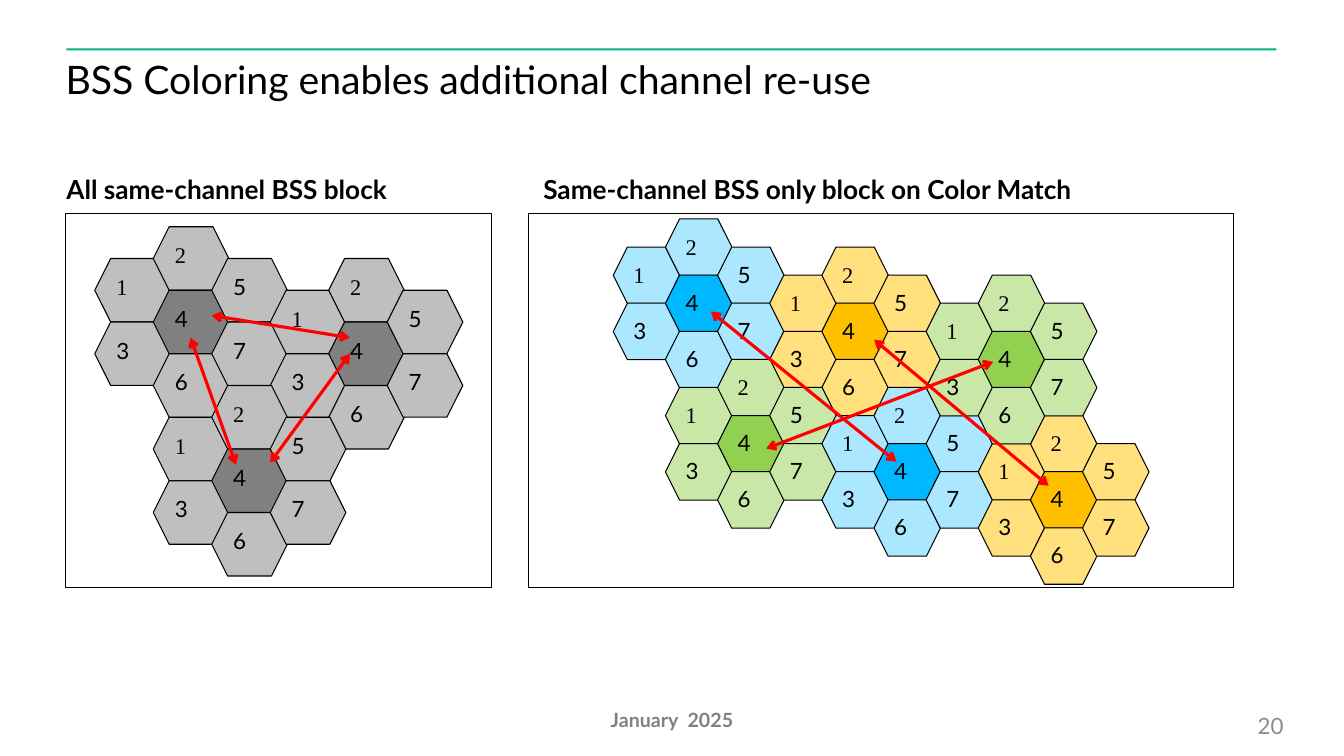
from dataclasses import dataclass

from pptx import Presentation
from pptx import util as u
from pptx.dml.color import RGBColor
from pptx.enum import shapes, text
from pptx.oxml import ns, xmlchemy


@dataclass(frozen=True)
class Theme:
    sans: str = "Lato"
    serif: str = "Times New Roman"
    ink: str = "000000"
    rule: str = "00B388"
    arrow: str = "FF0000"
    date: str = "808080"
    number: str = "8C8C8C"
    gray: tuple = ("BFBFBF", "808080")
    blue: tuple = ("ABE7FF", "00B8FF")
    yellow: tuple = ("FFE07D", "FFC000")
    green: tuple = ("C9E7A7", "92D050")
    title_size: float = 28
    heading_size: float = 18.7
    label_size: float = 16
    date_size: float = 14
    outline: float = 0.75
    arrow_width: float = 2.25


CELL_STEPS = {
    "1": (-1, -1), "2": (0, -2), "3": (-1, 1), "4": (0, 0),
    "5": (1, -1), "6": (0, 2), "7": (1, 1),
}


@dataclass(frozen=True)
class Grid:
    left: float
    top: float
    cell_width: float
    cell_height: float
    column: float
    half_row: float


class SlideBuilder:
    def __init__(self, presentation, theme):
        self.theme = theme
        self.slide = presentation.slides.add_slide(presentation.slide_layouts[5])

    def set_text(self, shape, words, size, color, font=None, bold=False,
                 align=text.PP_ALIGN.LEFT, anchor=text.MSO_ANCHOR.TOP, inset=None):
        frame = shape.text_frame
        frame.text = words
        frame.word_wrap = True
        frame.auto_size = text.MSO_AUTO_SIZE.NONE
        frame.vertical_anchor = anchor
        if inset is not None:
            frame.margin_left = frame.margin_right = u.Inches(inset)
            frame.margin_top = frame.margin_bottom = u.Inches(inset)
        paragraph = frame.paragraphs[0]
        paragraph.alignment = align
        style = paragraph.runs[0].font
        style.name = font or self.theme.sans
        style.size = u.Pt(size)
        style.bold = bold
        style.color.rgb = RGBColor.from_string(color)
        return paragraph

    def title(self, words, left, top, width, height):
        shape = self.slide.shapes.title
        shape.left, shape.top = u.Inches(left), u.Inches(top)
        shape.width, shape.height = u.Inches(width), u.Inches(height)
        paragraph = self.set_text(shape, words, self.theme.title_size, self.theme.ink, inset=0)
        paragraph.line_spacing = 0.9

    def label(self, words, box, size, color, **style):
        shape = self.slide.shapes.add_textbox(*map(u.Inches, box))
        self.set_text(shape, words, size, color, **style)

    def block(self, kind, box, fill=None, outlined=True):
        shape = self.slide.shapes.add_shape(kind, *map(u.Inches, box))
        shape.shadow.inherit = False
        if fill:
            shape.fill.solid()
            shape.fill.fore_color.rgb = RGBColor.from_string(fill)
        else:
            shape.fill.background()
        if outlined:
            shape.line.color.rgb = RGBColor.from_string(self.theme.ink)
            shape.line.width = u.Pt(self.theme.outline)
        else:
            shape.line.fill.background()
        return shape

    def cluster(self, grid, column, half_row, colors):
        pale, strong = colors
        for digit, (column_step, row_step) in CELL_STEPS.items():
            box = (grid.left + (column + column_step) * grid.column,
                   grid.top + (half_row + row_step) * grid.half_row,
                   grid.cell_width, grid.cell_height)
            cell = self.block(shapes.MSO_SHAPE.HEXAGON, box, strong if digit == "4" else pale)
            font = self.theme.serif if digit in "12" else self.theme.sans
            self.set_text(cell, digit, self.theme.label_size, self.theme.ink, font=font)

    def arrow(self, start, end):
        connector = self.slide.shapes.add_connector(
            shapes.MSO_CONNECTOR.STRAIGHT, *map(u.Inches, start + end))
        connector.line.color.rgb = RGBColor.from_string(self.theme.arrow)
        connector.line.width = u.Pt(self.theme.arrow_width)
        properties = connector.element.find(ns.qn("p:spPr"))
        line = properties.find(ns.qn("a:ln"))
        for tag in ("a:headEnd", "a:tailEnd"):
            tip = xmlchemy.OxmlElement(tag)
            tip.set("type", "arrow")
            line.append(tip)
        properties.append(xmlchemy.OxmlElement("a:effectLst"))


def main():
    presentation = Presentation()
    presentation.slide_width = u.Inches(13.33)
    presentation.slide_height = u.Inches(7.5)
    theme = Theme()
    builder = SlideBuilder(presentation, theme)
    rectangle = shapes.MSO_SHAPE.RECTANGLE

    builder.block(rectangle, (0.66, 0.48, 12, 0.02), theme.rule, outlined=False)
    builder.title("BSS Coloring enables additional channel re-use", 0.65, 0.6, 12.06, 0.95)

    panels = [
        ("All same-channel BSS block", (0.56, 1.67, 4.69, 0.42), (0.65, 2.12, 4.23, 3.71),
         Grid(1.52, 2.88, 0.75, 0.63, 0.58, 0.63 / 2),
         [(0, 0, theme.gray), (3, 1, theme.gray), (1, 5, theme.gray)],
         [((2.68, 4.59), (3.47, 3.51)), ((2.34, 4.61), (1.89, 3.35)),
          ((3.47, 3.35), (2.1, 3.13))]),
        ("Same-channel BSS only block on Color Match", (5.29, 1.67, 5.92, 0.42),
         (5.24, 2.12, 6.99, 3.71),
         Grid(6.6, 2.73, 0.66, 0.56, 3.62 / 7, 1.95 / 7),
         [(0, 0, theme.blue), (3, 1, theme.yellow), (1, 5, theme.green),
          (4, 6, theme.blue), (7, 7, theme.yellow), (6, 2, theme.green)],
         [((10.4, 4.82), (8.67, 3.37)), ((8.89, 4.58), (7.05, 3.09)),
          ((9.85, 3.59), (7.6, 4.45))]),
    ]
    for heading, heading_box, frame_box, grid, clusters, arrows in panels:
        builder.block(rectangle, frame_box)
        for column, half_row, colors in clusters:
            builder.cluster(grid, column, half_row, colors)
        for start, end in arrows:
            builder.arrow(start, end)
        builder.label(heading, heading_box, theme.heading_size, theme.ink, bold=True)

    builder.label("20", (12.25, 7.02, 0.58, 0.25), theme.label_size, theme.number,
                  align=text.PP_ALIGN.RIGHT)
    builder.label("January  2025", (6.02, 7.03, 1.29, 0.23), theme.date_size, theme.date,
                  bold=True, align=text.PP_ALIGN.CENTER,
                  anchor=text.MSO_ANCHOR.BOTTOM, inset=0)
    presentation.save("out.pptx")


if __name__ == "__main__":
    main()
